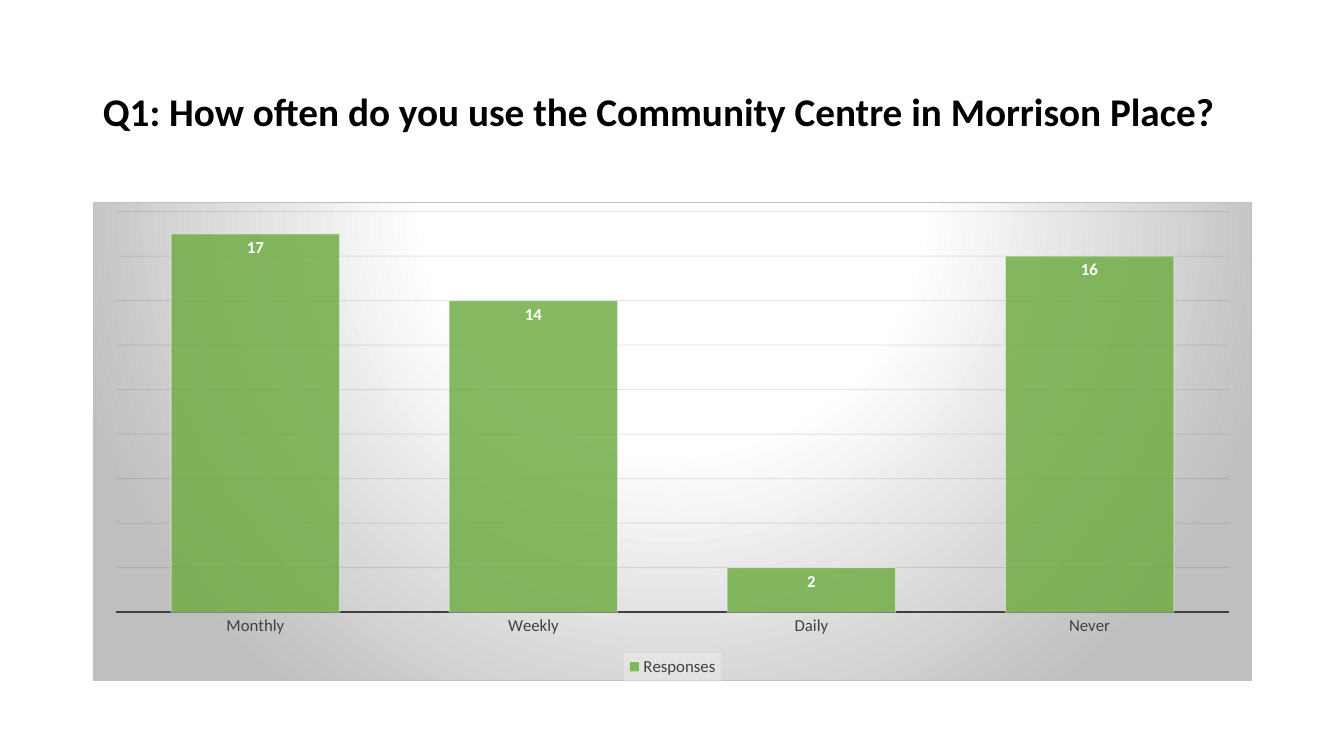
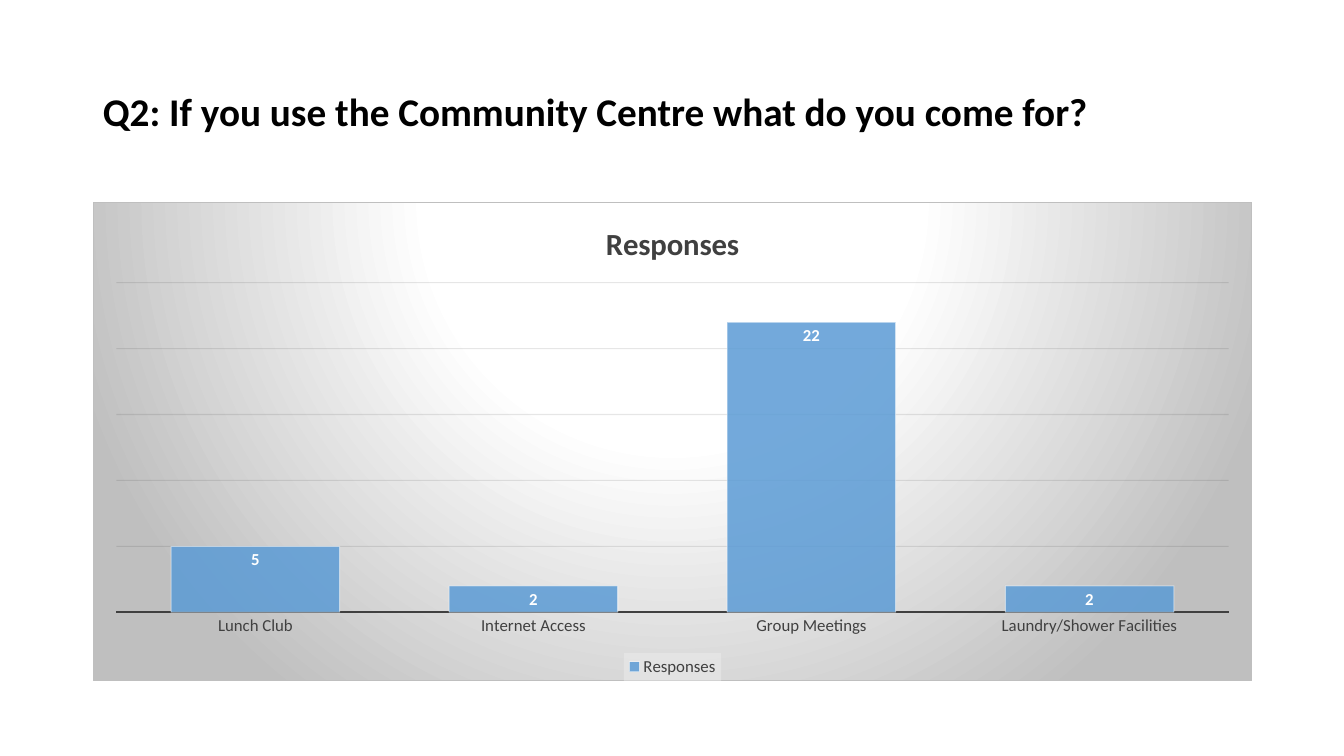
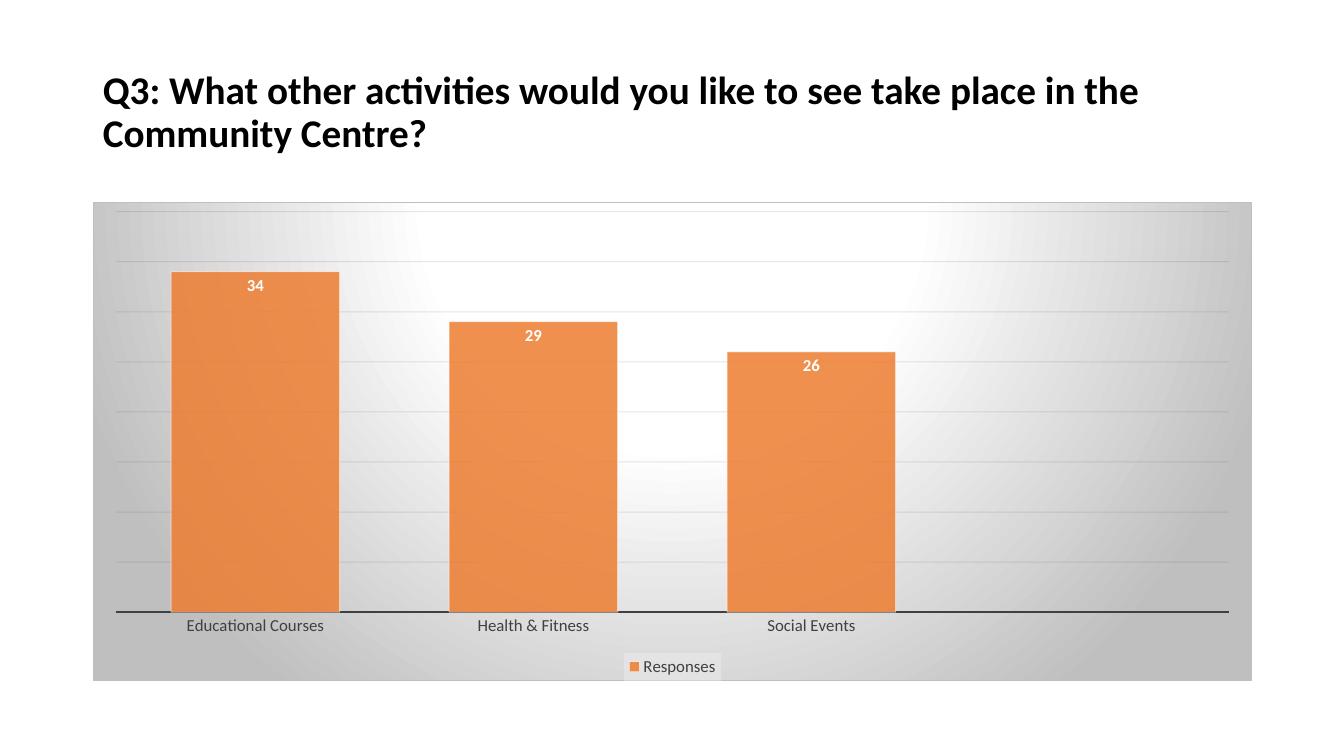
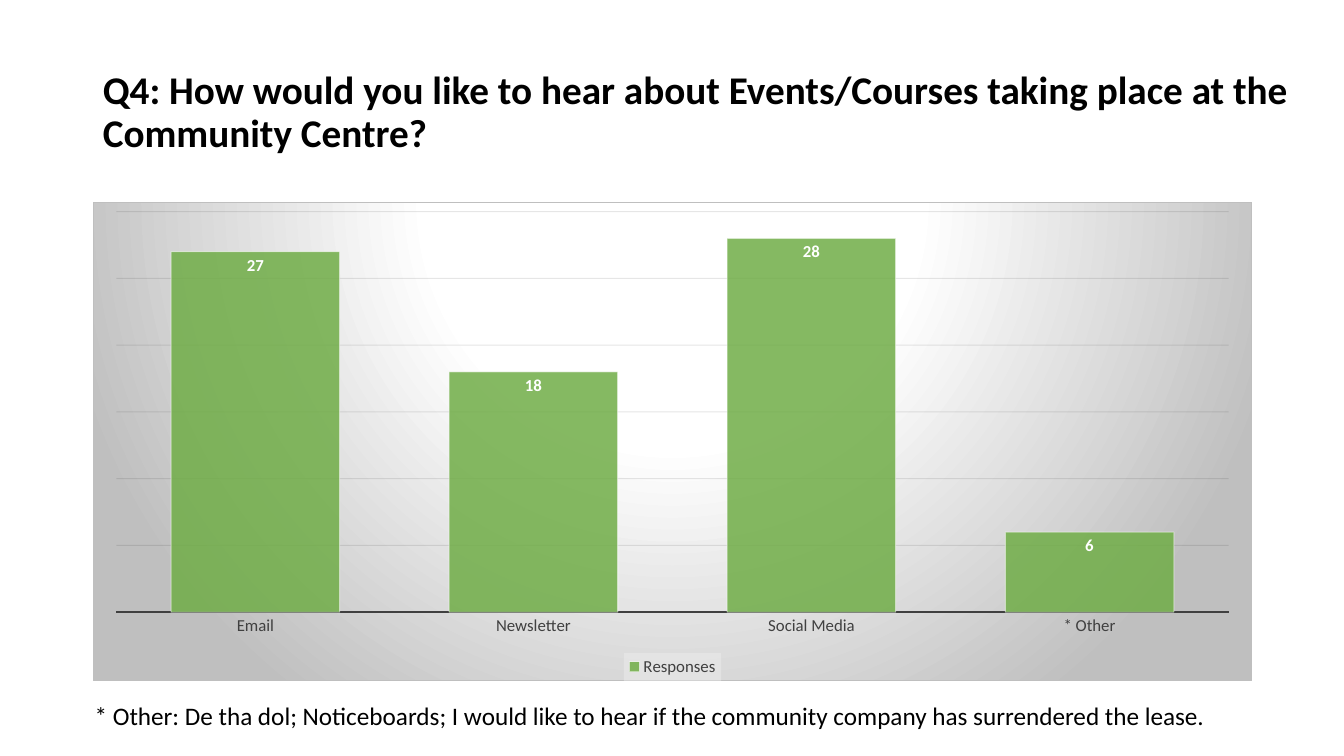
from dataclasses import dataclass
from typing import Any

from lxml.etree import SubElement
from pptx import Presentation
from pptx.chart.chart import Chart
from pptx.chart.data import CategoryChartData
from pptx.dml.color import RGBColor
from pptx.enum.chart import XL_CHART_TYPE, XL_LABEL_POSITION, XL_LEGEND_POSITION, XL_TICK_MARK
from pptx.enum.text import MSO_ANCHOR, MSO_AUTO_SIZE, PP_ALIGN
from pptx.oxml import parse_xml
from pptx.oxml.ns import nsdecls, qn
from pptx.slide import Slide
from pptx.util import Inches, Pt

FONT = "Calibri"
BLACK, WHITE, DARK, GREY = "000000", "FFFFFF", "404040", "BFBFBF"
GREEN, BLUE, ORANGE = "70AD47", "5B9BD5", "ED7D31"
GRID, LEGEND = "0D0D0D", "F2F2F2"
LEFT, WIDTH = 0.92, 11.5

TITLE_FRAME = {
    "word_wrap": True,
    "auto_size": MSO_AUTO_SIZE.NONE,
    "vertical_anchor": MSO_ANCHOR.MIDDLE,
}
TITLE_PARAGRAPH = {"alignment": PP_ALIGN.LEFT, "line_spacing": 0.9}
TITLE_FONT = {"name": FONT, "size": Pt(28), "bold": True}
NOTE_FONT = {"name": FONT, "size": Pt(18)}
CHART_FONT = {"name": FONT, "size": Pt(10)}
CHART_TITLE_FONT = {"name": FONT, "size": Pt(22), "bold": True}
AXIS_FONT = {"name": FONT, "size": Pt(12), "bold": False}
LABEL_FONT = {"name": FONT, "size": Pt(12), "bold": True}
LABELS = {"show_value": True, "position": XL_LABEL_POSITION.INSIDE_END}
LEGEND_PLACE = {"position": XL_LEGEND_POSITION.BOTTOM, "include_in_layout": False}

CHART_BACKGROUND = f"""
<c:spPr {nsdecls("c", "a")}>
  <a:gradFill>
    <a:gsLst>
      <a:gs pos="0"><a:srgbClr val="{WHITE}"/></a:gs>
      <a:gs pos="39000"><a:srgbClr val="{WHITE}"/></a:gs>
      <a:gs pos="100000"><a:srgbClr val="{GREY}"/></a:gs>
    </a:gsLst>
    <a:path path="circle"><a:fillToRect l="50000" t="-80000" r="50000" b="180000"/></a:path>
  </a:gradFill>
  <a:ln w="9525"><a:solidFill><a:srgbClr val="{GREY}"/></a:solidFill></a:ln>
</c:spPr>"""
LEGEND_BACKGROUND = f"""
<c:spPr {nsdecls("c", "a")}>
  <a:solidFill><a:srgbClr val="{LEGEND}"><a:alpha val="39000"/></a:srgbClr></a:solidFill>
</c:spPr>"""


@dataclass(frozen=True)
class Question:
    """One survey question and its responses."""

    title: str
    responses: dict[str, int | None]
    color: str
    maximum: int
    step: int = 5
    title_width: float = WIDTH
    chart_title: str = ""
    note: str = ""


QUESTIONS = [
    Question(
        "Q1: How often do you use the Community Centre in Morrison Place?",
        {"Monthly": 17, "Weekly": 14, "Daily": 2, "Never": 16},
        GREEN,
        maximum=18,
        step=2,
    ),
    Question(
        "Q2: If you use the Community Centre what do you come for?",
        {"Lunch Club": 5, "Internet Access": 2, "Group Meetings": 22, "Laundry/Shower Facilities": 2},
        BLUE,
        maximum=25,
        chart_title="Responses",
    ),
    Question(
        "Q3: What other activities would you like to see take place in the Community Centre?",
        {"Educational Courses": 34, "Health & Fitness": 29, "Social Events": 26, "": None},
        ORANGE,
        maximum=40,
    ),
    Question(
        "Q4: How would you like to hear about Events/Courses taking place at the Community Centre?",
        {"Email": 27, "Newsletter": 18, "Social Media": 28, "* Other": 6},
        GREEN,
        maximum=30,
        title_width=12.11,
        note="* Other: De tha dol; Noticeboards; I would like to hear if the "
        "community company has surrendered the lease.",
    ),
]


def rgb(color: str) -> RGBColor:
    """Turn a hex string into a colour."""
    return RGBColor.from_string(color)


def apply_format(target: Any, values: dict[str, Any]) -> None:
    """Set every format value on the target."""
    for name, value in values.items():
        setattr(target, name, value)


def format_font(font: Any, values: dict[str, Any], color: str) -> None:
    """Set a font's values and its colour."""
    apply_format(font, values)
    font.color.rgb = rgb(color)


def format_line(line: Any, color: str, width: float) -> None:
    """Set a line's colour and its width in points."""
    line.color.rgb = rgb(color)
    line.width = Pt(width)


def set_opacity(chart_format: Any, percent: int, *parents: str) -> None:
    """Make the colour below the given parent tags partly transparent."""
    tags = ("c:spPr", *parents, "a:solidFill", "a:srgbClr")
    color = chart_format.element.find("/".join(qn(tag) for tag in tags))
    SubElement(color, qn("a:alpha"), val=str(percent * 1000))


def add_title(slide: Slide, text: str, width: float) -> None:
    """Place and format the title placeholder."""
    title = slide.shapes.title
    apply_format(
        title,
        {"left": Inches(LEFT), "top": Inches(0.4), "width": Inches(width), "height": Inches(1.45)},
    )
    frame = title.text_frame
    frame.text = text
    apply_format(frame, TITLE_FRAME)
    paragraph = frame.paragraphs[0]
    apply_format(paragraph, TITLE_PARAGRAPH)
    format_font(paragraph.runs[0].font, TITLE_FONT, BLACK)


def format_axes(chart: Chart, question: Question) -> None:
    """Format the category axis and the hidden value axis with its grid."""
    category_axis = chart.category_axis
    category_axis.major_tick_mark = XL_TICK_MARK.NONE
    format_font(category_axis.tick_labels.font, AXIS_FONT, DARK)
    format_line(category_axis.format.line, DARK, 1.5)
    value_axis = chart.value_axis
    apply_format(
        value_axis,
        {
            "visible": False,
            "has_major_gridlines": True,
            "minimum_scale": 0,
            "maximum_scale": question.maximum,
            "major_unit": question.step,
        },
    )
    grid_format = value_axis.major_gridlines.format
    format_line(grid_format.line, GRID, 0.75)
    set_opacity(grid_format, 10, "a:ln")


def format_columns(chart: Chart, color: str) -> None:
    """Format the columns and their value labels."""
    plot = chart.plots[0]
    apply_format(plot, {"gap_width": 65, "vary_by_categories": False})
    series = plot.series[0]
    series.format.fill.solid()
    series.format.fill.fore_color.rgb = rgb(color)
    set_opacity(series.format, 85)
    format_line(series.format.line, WHITE, 0.75)
    set_opacity(series.format, 50, "a:ln")
    apply_format(series.data_labels, LABELS)
    format_font(series.data_labels.font, LABEL_FONT, WHITE)


def add_response_chart(slide: Slide, question: Question) -> None:
    """Add the column chart of one question."""
    data = CategoryChartData()
    data.categories = list(question.responses)
    data.add_series("Responses", list(question.responses.values()))
    chart = slide.shapes.add_chart(
        XL_CHART_TYPE.COLUMN_CLUSTERED,
        Inches(LEFT), Inches(2), Inches(WIDTH), Inches(4.76),
        data,
    ).chart
    format_font(chart.font, CHART_FONT, BLACK)
    apply_format(chart, {"has_title": bool(question.chart_title), "has_legend": True})
    if question.chart_title:
        frame = chart.chart_title.text_frame
        frame.text = question.chart_title
        format_font(frame.paragraphs[0].runs[0].font, CHART_TITLE_FONT, DARK)
    apply_format(chart.legend, LEGEND_PLACE)
    format_font(chart.legend.font, AXIS_FONT, DARK)
    format_axes(chart, question)
    format_columns(chart, question.color)
    chart_element = chart.element.find(qn("c:chart"))
    chart_element.addnext(parse_xml(CHART_BACKGROUND))
    overlay = chart_element.find(f"{qn('c:legend')}/{qn('c:overlay')}")
    overlay.addnext(parse_xml(LEGEND_BACKGROUND))


def add_note(slide: Slide, text: str) -> None:
    """Add the note below the chart."""
    frame = slide.shapes.add_textbox(Inches(0.84), Inches(6.9), Inches(11.62), Inches(0.4)).text_frame
    frame.text = text
    apply_format(frame, {"word_wrap": True, "auto_size": MSO_AUTO_SIZE.SHAPE_TO_FIT_TEXT})
    format_font(frame.paragraphs[0].runs[0].font, NOTE_FONT, BLACK)


def main() -> None:
    """Build and save the presentation."""
    presentation = Presentation()
    apply_format(presentation, {"slide_width": Inches(13.33), "slide_height": Inches(7.5)})
    title_only = presentation.slide_layouts.get_by_name("Title Only")
    for question in QUESTIONS:
        slide = presentation.slides.add_slide(title_only)
        add_title(slide, question.title, question.title_width)
        add_response_chart(slide, question)
        if question.note:
            add_note(slide, question.note)
    presentation.save("out.pptx")


if __name__ == "__main__":
    main()
